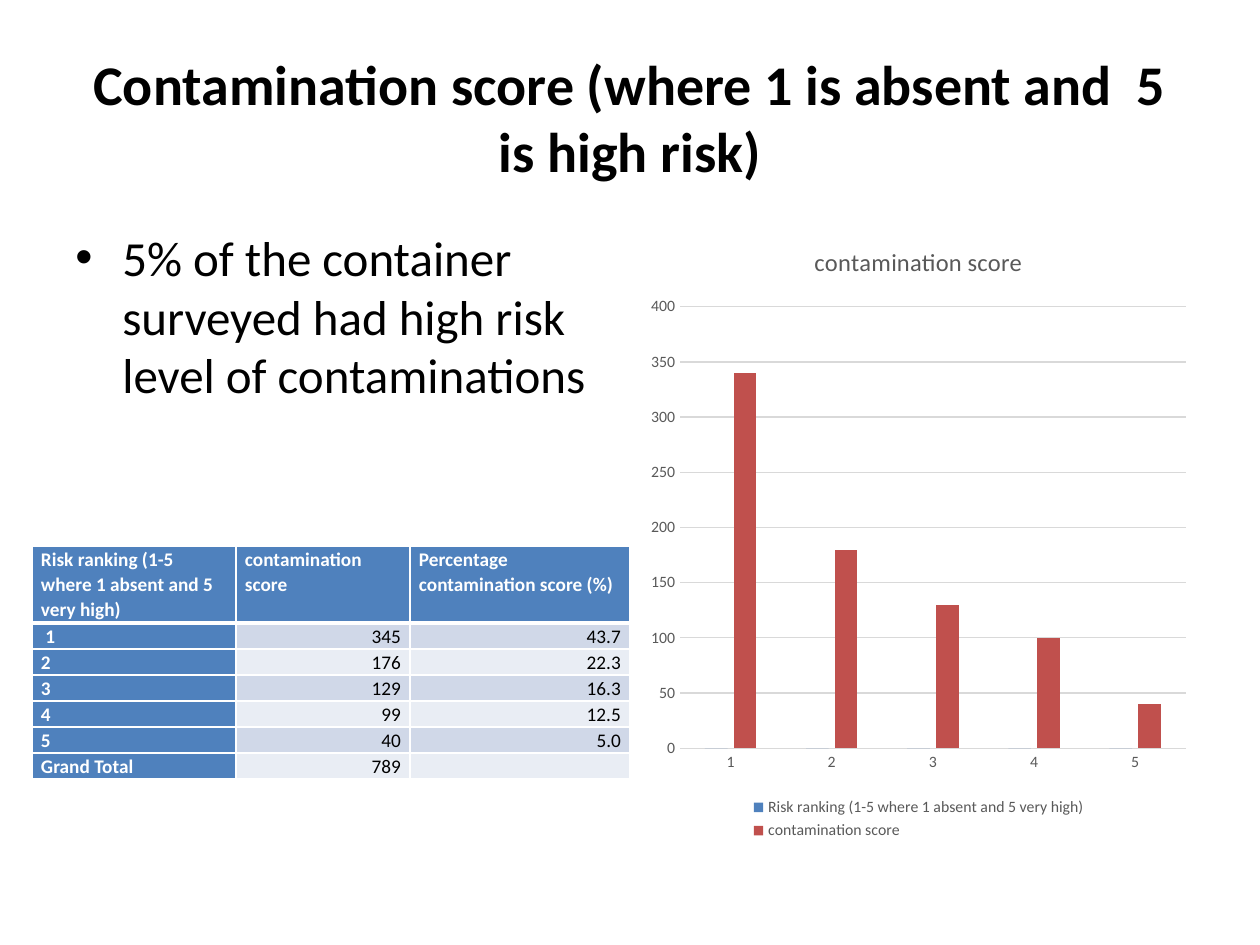
import lxml.etree
import pptx
import pptx.chart.data
import pptx.dml.color
import pptx.enum.chart
import pptx.enum.text
import pptx.oxml
import pptx.oxml.ns
import pptx.util

EMU_PER_PX = 914400 // 126
FONT = "Calibri"
COLORS = {
    "black": "000000",
    "white": "FFFFFF",
    "gray": "595959",
    "grid": "D9D9D9",
    "blue": "4F81BD",
    "red": "C0504D",
    "band_dark": "D0D8E8",
    "band_light": "E9EDF4",
}
SCORES = [345, 176, 129, 99, 40]
PERCENTAGES = ["43.7", "22.3", "16.3", "12.5", "5.0"]
RANKING_NAME = "Risk ranking (1-5 where 1 absent and 5 very high)"
SCORE_NAME = "contamination score"
ALIGN = pptx.enum.text.PP_ALIGN


def px(length):
    return pptx.util.Emu(length * EMU_PER_PX)


def color(name):
    return pptx.dml.color.RGBColor.from_string(COLORS[name])


def style_font(font, size, color_name, bold=False):
    font.name = FONT
    font.size = pptx.util.Pt(size)
    font.bold = bold
    font.color.rgb = color(color_name)


def add_xml(parent, tag, **attributes):
    return lxml.etree.SubElement(parent, pptx.oxml.ns.qn(tag), attributes)


def add_text(page, frame, text, size, bold=False, align=ALIGN.LEFT, bullet=False,
             anchor=pptx.enum.text.MSO_ANCHOR.TOP):
    box = page.shapes.add_textbox(*map(px, frame))
    box.text_frame.word_wrap = True
    box.text_frame.vertical_anchor = anchor
    para = box.text_frame.paragraphs[0]
    para.text = text
    para.alignment = align
    if bullet:
        properties = para._p.get_or_add_pPr()
        properties.set("marL", str(px(47)))
        properties.set("indent", str(-px(47)))
        add_xml(properties, "a:buFont", typeface="Arial")
        add_xml(properties, "a:buChar", char="•")
    style_font(para.font, size, "black", bold)


def add_borders(cell, bottom_width):
    properties = cell._tc.get_or_add_tcPr()
    widths = {"a:lnL": 1, "a:lnR": 1, "a:lnT": 1, "a:lnB": bottom_width}
    for tag, width in widths.items():
        line = add_xml(properties, tag, w=str(pptx.util.Pt(width)))
        add_xml(add_xml(line, "a:solidFill"), "a:srgbClr", val=COLORS["white"])


def fill_cell(cell, text, fill, is_header, is_label):
    add_borders(cell, 3 if is_header else 1)
    cell.fill.solid()
    cell.fill.fore_color.rgb = color(fill)
    cell.margin_left = cell.margin_right = px(9)
    cell.margin_top = cell.margin_bottom = 0
    para = cell.text_frame.paragraphs[0]
    para.line_spacing = 1.07
    para.alignment = ALIGN.LEFT if is_label else ALIGN.RIGHT
    style_font(para.font, 11, "white" if is_label else "black", is_label)
    if text:
        para.text = text
    else:
        add_xml(para._p, "a:endParaRPr", sz="1100")


def add_score_table(page):
    rows = [[RANKING_NAME, SCORE_NAME, "Percentage contamination score (%)"]]
    for rank, (score, percentage) in enumerate(zip(SCORES, PERCENTAGES), 1):
        rows.append([" 1" if rank == 1 else str(rank), str(score), percentage])
    rows.append(["Grand Total", str(sum(SCORES)), ""])

    widths = [204, 174, 220]
    heights = [77] + [26] * (len(rows) - 1)
    table = page.shapes.add_table(
        len(rows), len(widths), px(32), px(546), px(sum(widths)), px(sum(heights))).table
    for column, width in zip(table.columns, widths):
        column.width = px(width)
    for row, height in zip(table.rows, heights):
        row.height = px(height)
    for r, texts in enumerate(rows):
        band = "band_dark" if r % 2 else "band_light"
        for c, text in enumerate(texts):
            is_label = r == 0 or c == 0
            fill_cell(table.cell(r, c), text, "blue" if is_label else band, r == 0, is_label)


def style_axis(axis):
    axis.major_tick_mark = axis.minor_tick_mark = pptx.enum.chart.XL_TICK_MARK.NONE
    style_font(axis.tick_labels.font, 9, "gray")


def style_line(line):
    line.color.rgb = color("grid")
    line.width = pptx.util.Pt(0.75)


def round_to_tens(values):
    return [round(value, -1) for value in values]


def add_score_chart(page):
    ranks = range(1, len(SCORES) + 1)
    data = pptx.chart.data.CategoryChartData()
    data.categories = [str(rank) for rank in ranks]
    data.add_series(RANKING_NAME, round_to_tens(ranks))
    data.add_series(SCORE_NAME, round_to_tens(SCORES))
    chart = page.shapes.add_chart(
        pptx.enum.chart.XL_CHART_TYPE.COLUMN_CLUSTERED,
        px(640), px(221), px(557), px(624), data).chart
    style_font(chart.font, 10, "black")

    chart.has_title = True
    title = chart.chart_title.text_frame.paragraphs[0]
    title.text = SCORE_NAME
    style_font(title.font, 14, "gray")

    chart.has_legend = True
    chart.legend.position = pptx.enum.chart.XL_LEGEND_POSITION.BOTTOM
    chart.legend.include_in_layout = False
    style_font(chart.legend.font, 9, "gray")

    style_axis(chart.category_axis)
    style_line(chart.category_axis.format.line)
    values = chart.value_axis
    style_axis(values)
    values.minimum_scale, values.maximum_scale, values.major_unit = 0, 400, 50
    values.format.line.fill.background()
    style_line(values.major_gridlines.format.line)

    plot = chart.plots[0]
    plot.vary_by_categories = False
    plot.gap_width = 219
    plot.overlap = -27
    for series, name in zip(plot.series, ["blue", "red"]):
        series.format.fill.solid()
        series.format.fill.fore_color.rgb = color(name)


def main():
    deck = pptx.Presentation()
    deck.slide_width, deck.slide_height = px(1260), px(945)
    page = deck.slides.add_slide(deck.slide_layouts[6])
    add_text(page, (63, 38, 1134, 157),
             "Contamination score (where 1 is absent and  5 is high risk)", 32,
             bold=True, align=ALIGN.CENTER, anchor=pptx.enum.text.MSO_ANCHOR.MIDDLE)
    add_text(page, (63, 221, 557, 624),
             "5% of the container surveyed had high risk level of contaminations", 28,
             bullet=True)
    add_score_chart(page)
    add_score_table(page)
    deck.save("out.pptx")


if __name__ == "__main__":
    main()
